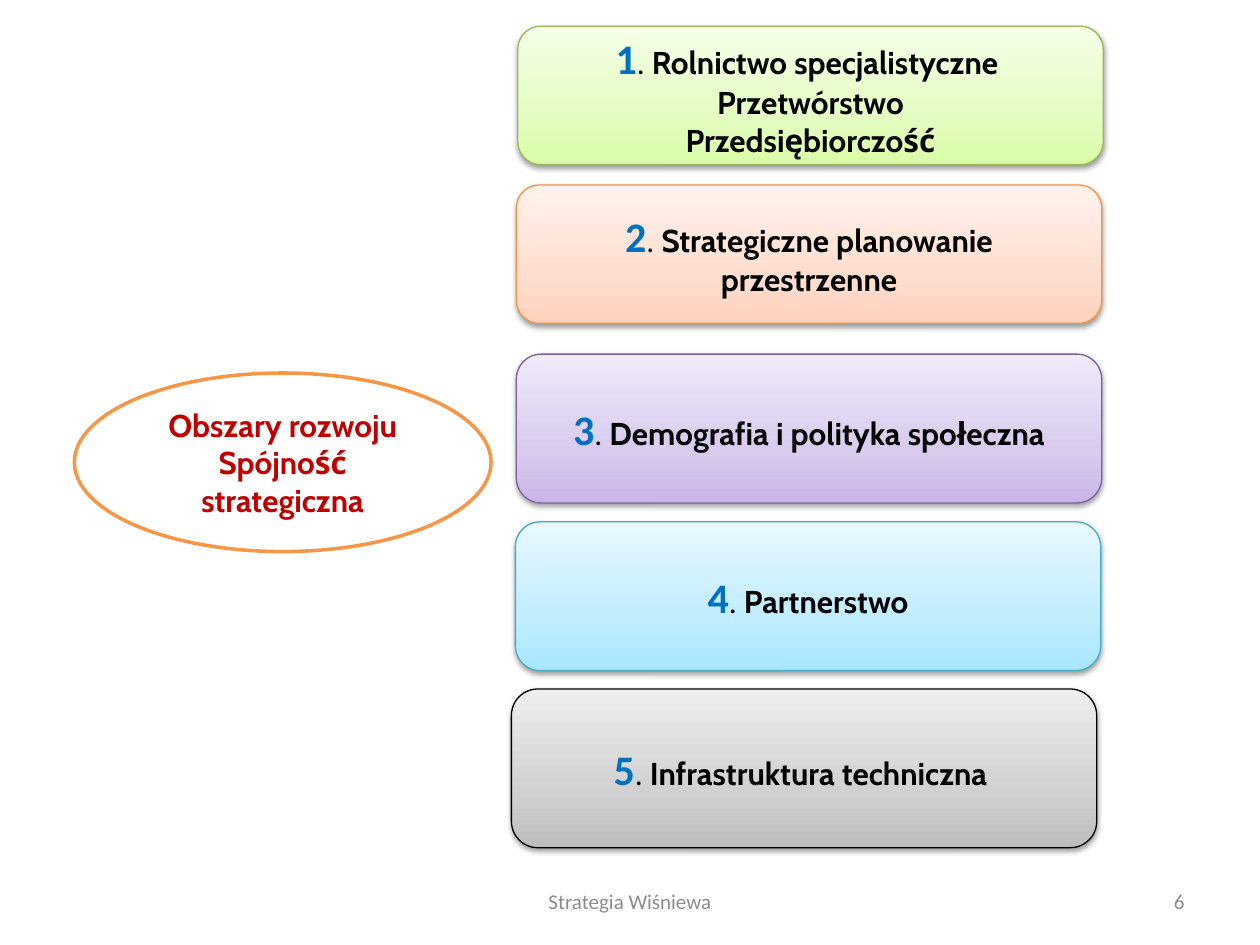
from copy import deepcopy

from pptx import Presentation
from pptx.dml.color import RGBColor as Rgb
from pptx.enum.shapes import MSO_SHAPE as Kind
from pptx.enum.text import MSO_ANCHOR as Anchor, PP_ALIGN as Align
from pptx.oxml import parse_xml
from pptx.oxml.ns import nsdecls, qn
from pptx.util import Cm, Pt

BLACK = Rgb(0x00, 0x00, 0x00)
WHITE = Rgb(0xFF, 0xFF, 0xFF)
GRAY = Rgb(0x8C, 0x8C, 0x8C)
BLUE = Rgb(0x00, 0x70, 0xC0)
RED = Rgb(0xC0, 0x00, 0x00)
ORANGE = Rgb(0xF7, 0x96, 0x46)
GREENS = Rgb(0xDA, 0xFD, 0xA7), Rgb(0xE4, 0xFC, 0xC2), Rgb(0xF5, 0xFF, 0xE7)
PEACHES = Rgb(0xFF, 0xD2, 0xBD), Rgb(0xFF, 0xDE, 0xD0), Rgb(0xFF, 0xF2, 0xED)
LILACS = Rgb(0xC9, 0xB5, 0xE8), Rgb(0xD8, 0xCB, 0xEE), Rgb(0xF0, 0xEA, 0xF9)
SKIES = Rgb(0xA7, 0xE6, 0xFF), Rgb(0xC1, 0xED, 0xFF), Rgb(0xE7, 0xF8, 0xFF)
GRAYS = Rgb(0xBD, 0xBD, 0xBD), Rgb(0xD1, 0xD1, 0xD1), Rgb(0xEE, 0xEE, 0xEE)
LEAF = Rgb(0x98, 0xB9, 0x55)
RUST = Rgb(0xF6, 0x92, 0x40)
PLUM = Rgb(0x7D, 0x60, 0xA0)
TEAL = Rgb(0x46, 0xAA, 0xC5)

AREAS = [
    (10.44, 0.53, 2.79, GREENS, LEAF,
     ["Rolnictwo specjalistyczne ", "Przetwórstwo", "Przedsiębiorczość"]),
    (10.41, 3.73, 2.79, PEACHES, RUST, ["Strategiczne planowanie przestrzenne"]),
    (10.41, 7.14, 3, LILACS, PLUM, ["Demografia i polityka społeczna"]),
    (10.39, 10.52, 3, SKIES, TEAL, ["Partnerstwo"]),
    (10.31, 13.89, 3.2, GRAYS, BLACK, ["Infrastruktura techniczna "]),
]


class Deck:
    head = "Cabin"
    base = "Calibri"
    size = 18

    def __init__(self, slide):
        self.slide = slide

    def run(self, para, text, font, size, color, bold=False):
        run = para.add_run()
        run.text = text
        run.font.name = font
        run.font.size = Pt(size)
        run.font.bold = bold
        run.font.color.rgb = color

    def shape(self, kind, place, line, width):
        shape = self.slide.shapes.add_shape(kind, *map(Cm, place))
        shape.shadow.inherit = False
        shape.line.color.rgb = line
        shape.line.width = Pt(width)
        shape.text_frame.word_wrap = True
        shape.text_frame.vertical_anchor = Anchor.MIDDLE
        return shape

    def shade(self, shape, colors):
        fill = shape.fill
        fill.gradient()
        fill.gradient_angle = 90
        stops = shape.element.spPr.find(".//" + qn("a:gsLst"))
        stops.insert(1, deepcopy(stops[0]))
        for stop, color, pos in zip(fill.gradient_stops, colors, (0, 0.35, 1)):
            stop.color.rgb = color
            stop.position = pos

    def shadow(self, shape):
        shape.element.spPr.find(qn("a:effectLst")).append(parse_xml(
            f'<a:outerShdw {nsdecls("a")} blurRad="40000" dist="20000" '
            'dir="5400000" rotWithShape="0"><a:srgbClr val="000000">'
            '<a:alpha val="38000"/></a:srgbClr></a:outerShdw>'))

    def oval(self, place, text):
        shape = self.shape(Kind.OVAL, place, ORANGE, 2)
        shape.fill.solid()
        shape.fill.fore_color.rgb = WHITE
        para = shape.text_frame.paragraphs[0]
        para.alignment = Align.CENTER
        self.run(para, text, self.head, self.size, RED, True)

    def area(self, num, place, colors, line, texts):
        shape = self.shape(Kind.ROUNDED_RECTANGLE, place, line, 0.75)
        self.shade(shape, colors)
        self.shadow(shape)
        frame = shape.text_frame
        for i, text in enumerate(texts):
            para = frame.add_paragraph() if i else frame.paragraphs[0]
            para.alignment = Align.CENTER
            if not i:
                self.run(para, str(num), self.base, 24, BLUE, True)
                self.run(para, ". ", self.base, self.size, BLACK)
            self.run(para, text, self.head, self.size, BLACK, True)

    def note(self, place, text, align):
        frame = self.slide.shapes.add_textbox(*map(Cm, place)).text_frame
        frame.word_wrap = True
        frame.vertical_anchor = Anchor.MIDDLE
        para = frame.paragraphs[0]
        para.alignment = align
        self.run(para, text, self.base, 12, GRAY)


def main():
    show = Presentation()
    show.slide_width, show.slide_height = Cm(25.4), Cm(19.05)
    deck = Deck(show.slides.add_slide(show.slide_layouts[6]))
    deck.note((8.68, 17.66, 8.04, 1.01), "Strategia Wiśniewa", Align.CENTER)
    deck.note((18.2, 17.66, 5.93, 1.01), "6", Align.RIGHT)
    deck.oval((1.5, 7.52, 8.4, 3.6), "Obszary rozwoju Spójność strategiczna")
    for num, (left, top, high, colors, line, texts) in enumerate(AREAS, 1):
        deck.area(num, (left, top, 11.8, high), colors, line, texts)
    show.save("out.pptx")


if __name__ == "__main__":
    main()
